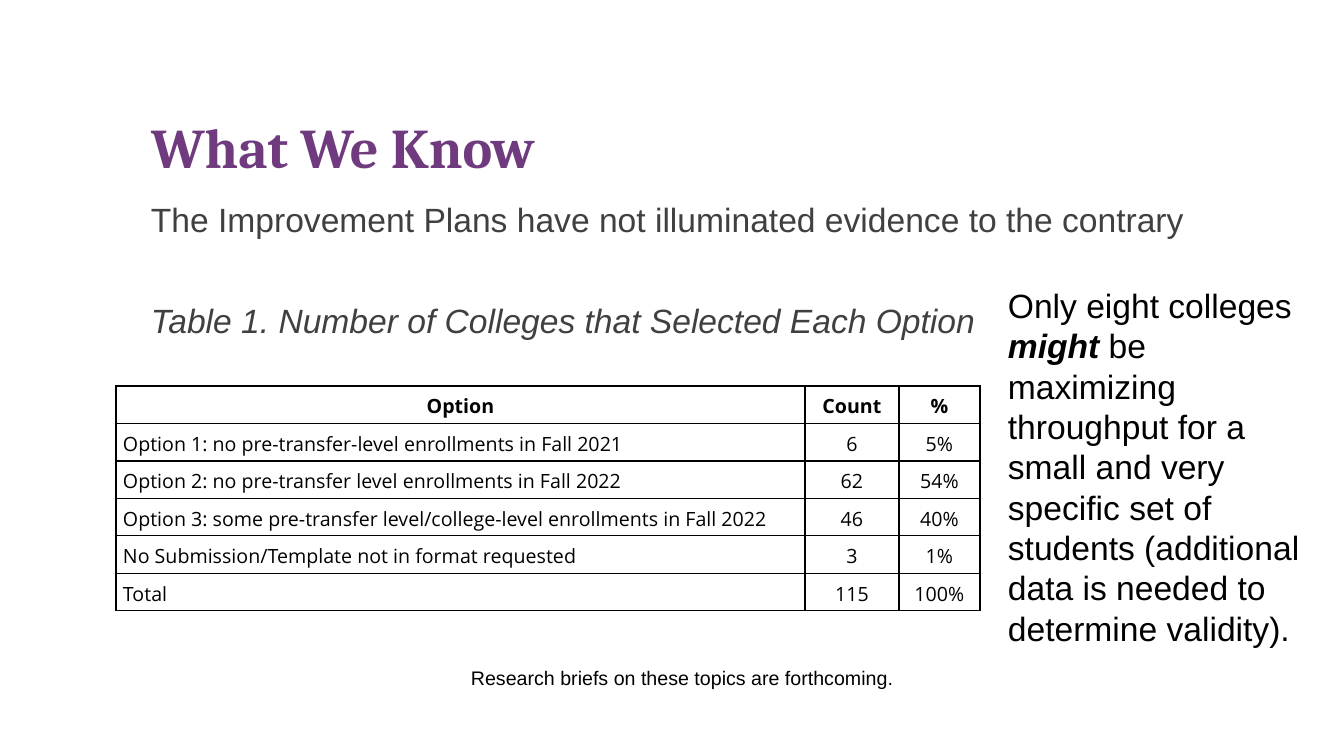
from lxml.etree import SubElement
from pptx import Presentation
from pptx.dml.color import RGBColor
from pptx.enum.text import MSO_ANCHOR, PP_ALIGN
from pptx.oxml.ns import qn
from pptx.util import Pt

WIDE, HIGH = 1344, 756
SCALE = 12192000 / WIDE

PURPLE = RGBColor(0x70, 0x3B, 0x7E)
GREY = RGBColor(0x40, 0x40, 0x40)
BLACK = RGBColor(0, 0, 0)

TITLE = dict(name="Cambria", size=Pt(40), bold=True, color=PURPLE)
BODY = dict(name="Arial", size=Pt(24), color=GREY)
SIDE = BODY | dict(color=BLACK)
NOTE = SIDE | dict(size=Pt(14))
CELL = dict(name="Open Sans", size=Pt(14), bold=False, color=BLACK)
HEAD = CELL | dict(bold=True)

COLS = (689, 94, 81)
ROWS = (
    ("Option", "Count", "%"),
    ("Option 1: no pre-transfer-level enrollments in Fall 2021", "6", "5%"),
    ("Option 2: no pre-transfer level enrollments in Fall 2022", "62", "54%"),
    ("Option 3: some pre-transfer level/college-level enrollments in Fall 2022",
     "46", "40%"),
    ("No Submission/Template not in format requested", "3", "1%"),
    ("Total", "115", "100%"),
)


def px(n):
    return round(n * SCALE)


def style(font, form):
    for key, value in form.items():
        if key == "color":
            font.color.rgb = value
        else:
            setattr(font, key, value)


def write(para, text, form):
    run = para.add_run()
    run.text = text
    style(run.font, form)


def add_box(slide, box):
    frame = slide.shapes.add_textbox(*map(px, box)).text_frame
    frame.word_wrap = True
    return frame


def add_title(slide, box):
    title = slide.shapes.title
    title.left, title.top, title.width, title.height = map(px, box)
    frame = title.text_frame
    frame.vertical_anchor = MSO_ANCHOR.BOTTOM
    para = frame.paragraphs[0]
    para.alignment = PP_ALIGN.LEFT
    para.line_spacing = 0.9
    write(para, "What We Know", TITLE)


def add_body(slide, box):
    frame = add_box(slide, box)
    claim, label = frame.paragraphs[0], frame.add_paragraph()
    claim.line_spacing = label.line_spacing = 0.9
    label.space_before = Pt(46)
    write(claim, "The Improvement Plans have not illuminated evidence "
          "to the contrary", BODY)
    write(label, "Table 1. Number of Colleges that Selected Each Option",
          BODY | dict(italic=True))


def add_side(slide, box):
    para = add_box(slide, box).paragraphs[0]
    write(para, "Only eight colleges ", SIDE)
    write(para, "might", SIDE | dict(bold=True, italic=True))
    write(para, " be maximizing throughput for a small and very specific set "
          "of students (additional data is needed to determine validity).",
          SIDE)


def add_note(slide, box):
    para = add_box(slide, box).paragraphs[0]
    write(para, "Research briefs on these topics are forthcoming.", NOTE)


def frame_cell(cell):
    # Black rule on each edge, no fill
    props = cell._tc.get_or_add_tcPr()
    for edge in ("a:lnL", "a:lnR", "a:lnT", "a:lnB"):
        line = SubElement(props, qn(edge), w=str(Pt(1)))
        fill = SubElement(line, qn("a:solidFill"))
        SubElement(fill, qn("a:srgbClr"), val=str(BLACK))
    cell.fill.background()


def add_grid(slide, box):
    grid = slide.shapes.add_table(
        len(ROWS), len(COLS), *map(px, box)).table
    grid.first_row = grid.horz_banding = False
    for col, width in zip(grid.columns, COLS):
        col.width = px(width)
    for r, texts in enumerate(ROWS):
        grid.rows[r].height = px(box[3] / len(ROWS))
        for c, text in enumerate(texts):
            cell = grid.cell(r, c)
            frame_cell(cell)
            cell.margin_left = cell.margin_right = cell.margin_top = px(7)
            cell.margin_bottom = px(3)
            para = cell.text_frame.paragraphs[0]
            left = r > 0 and c == 0
            para.alignment = PP_ALIGN.LEFT if left else PP_ALIGN.CENTER
            write(para, text, CELL if r else HEAD)


def main():
    deck = Presentation()
    deck.slide_width, deck.slide_height = px(WIDE), px(HIGH)
    slide = deck.slides.add_slide(deck.slide_layouts[5])
    add_title(slide, (141, 40, 1108, 146))
    add_body(slide, (141, 199, 1109, 487))
    add_note(slide, (461, 661, 555, 40))
    add_grid(slide, (116, 386, sum(COLS), 225))
    add_side(slide, (998, 280, 323, 336))
    deck.save("out.pptx")


if __name__ == "__main__":
    main()
